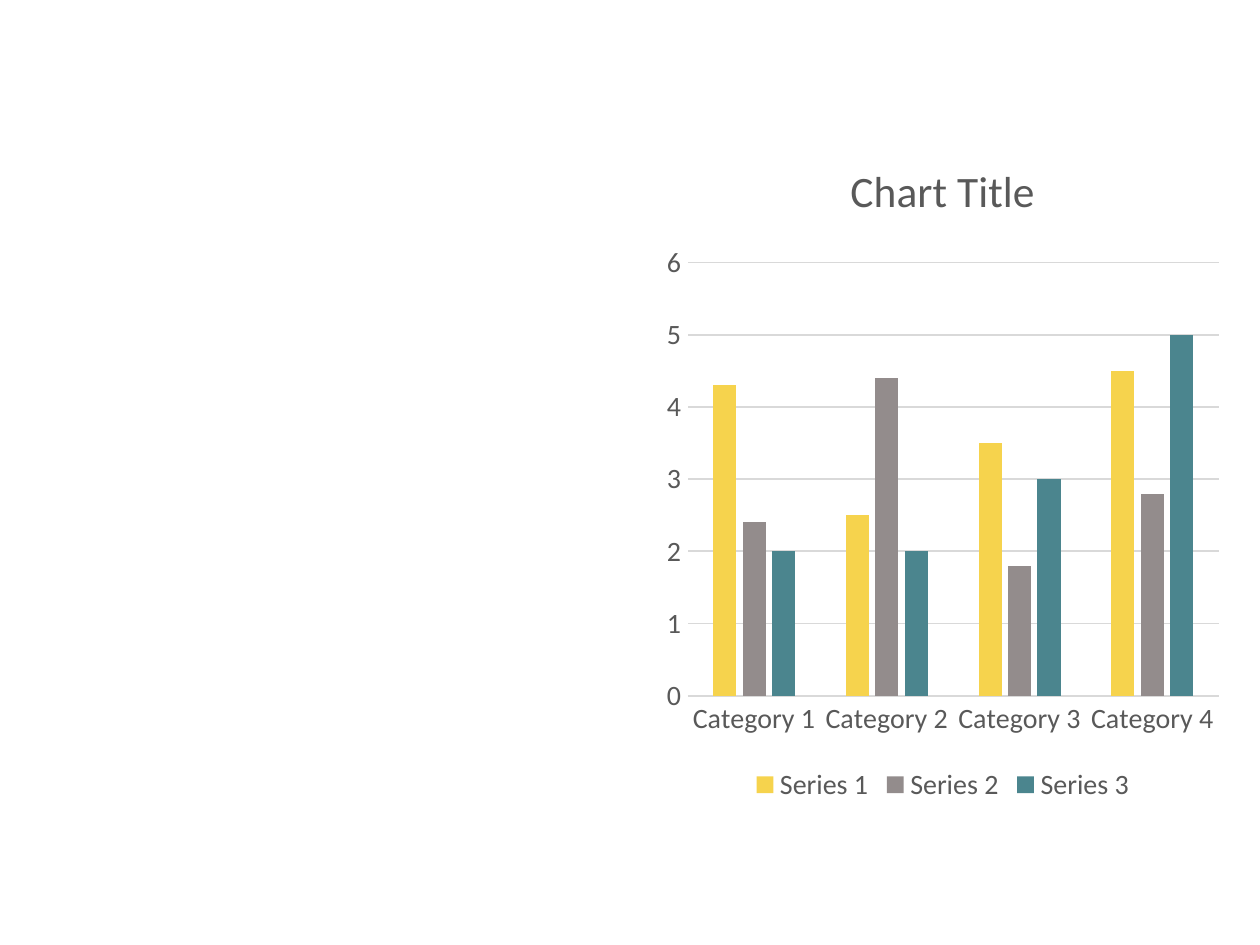
from dataclasses import dataclass

from pptx import Presentation
from pptx.chart.axis import CategoryAxis, ValueAxis
from pptx.chart.chart import Chart
from pptx.chart.data import CategoryChartData
from pptx.dml.color import RGBColor
from pptx.dml.line import LineFormat
from pptx.enum.chart import XL_CHART_TYPE as ChartType
from pptx.enum.chart import XL_LEGEND_POSITION as LegendPosition
from pptx.enum.chart import XL_TICK_MARK as TickMark
from pptx.slide import Slide
from pptx.text.text import Font
from pptx.util import Cm, Pt

YELLOW = RGBColor(0xF6, 0xD3, 0x4D)
GREY = RGBColor(0x93, 0x8C, 0x8C)
TEAL = RGBColor(0x4B, 0x85, 0x8E)
TEXT = RGBColor(0x59, 0x59, 0x59)
RULE = RGBColor(0xD9, 0xD9, 0xD9)
FONT_NAME = "Calibri"


@dataclass(frozen=True)
class Series:
    name: str
    values: tuple[float, ...]
    color: RGBColor


CATEGORIES = [f"Category {n}" for n in range(1, 5)]
SERIES = [
    Series("Series 1", (4.3, 2.5, 3.5, 4.5), YELLOW),
    Series("Series 2", (2.4, 4.4, 1.8, 2.8), GREY),
    Series("Series 3", (2, 2, 3, 5), TEAL),
]


def set_font(font: Font, size: float) -> None:
    font.name = FONT_NAME
    font.size = Pt(size)
    font.bold = False
    font.color.rgb = TEXT


def set_rule(line: LineFormat) -> None:
    """Give an axis or gridline the thin light grey stroke."""
    line.color.rgb = RULE
    line.width = Pt(0.75)


def style_axis(axis: CategoryAxis | ValueAxis) -> None:
    axis.major_tick_mark = TickMark.NONE
    axis.minor_tick_mark = TickMark.NONE
    set_font(axis.tick_labels.font, 12)


def add_column_chart(s: Slide) -> Chart:
    data = CategoryChartData()
    data.categories = CATEGORIES
    for series in SERIES:
        data.add_series(series.name, series.values)
    frame = s.shapes.add_chart(
        ChartType.COLUMN_CLUSTERED, Cm(9.91), Cm(1.96), Cm(8.69), Cm(10.26), data
    )
    return frame.chart


def style_columns(chart: Chart) -> None:
    plot = chart.plots[0]
    plot.gap_width = 219
    plot.overlap = -27
    plot.vary_by_categories = False
    for column, series in zip(plot.series, SERIES):
        column.format.fill.solid()
        column.format.fill.fore_color.rgb = series.color
        column.invert_if_negative = False


def style_axes(chart: Chart) -> None:
    style_axis(chart.category_axis)
    set_rule(chart.category_axis.format.line)

    value_axis = chart.value_axis
    style_axis(value_axis)
    value_axis.minimum_scale = 0
    value_axis.maximum_scale = 6
    value_axis.major_unit = 1
    value_axis.format.line.fill.background()
    value_axis.has_major_gridlines = True
    set_rule(value_axis.major_gridlines.format.line)


def add_title_and_legend(chart: Chart) -> None:
    chart.has_title = True
    title = chart.chart_title
    title.include_in_layout = False
    r = title.text_frame.paragraphs[0].add_run()
    r.text = "Chart Title"
    set_font(r.font, 18.6)

    chart.has_legend = True
    chart.legend.position = LegendPosition.BOTTOM
    chart.legend.include_in_layout = False
    set_font(chart.legend.font, 12)


def main() -> None:
    prs = Presentation()
    prs.slide_width = Cm(19.05)
    prs.slide_height = Cm(14.29)
    s = prs.slides.add_slide(prs.slide_layouts[6])

    chart = add_column_chart(s)
    set_font(chart.font, 10)
    style_columns(chart)
    style_axes(chart)
    add_title_and_legend(chart)

    prs.save("out.pptx")


if __name__ == "__main__":
    main()
